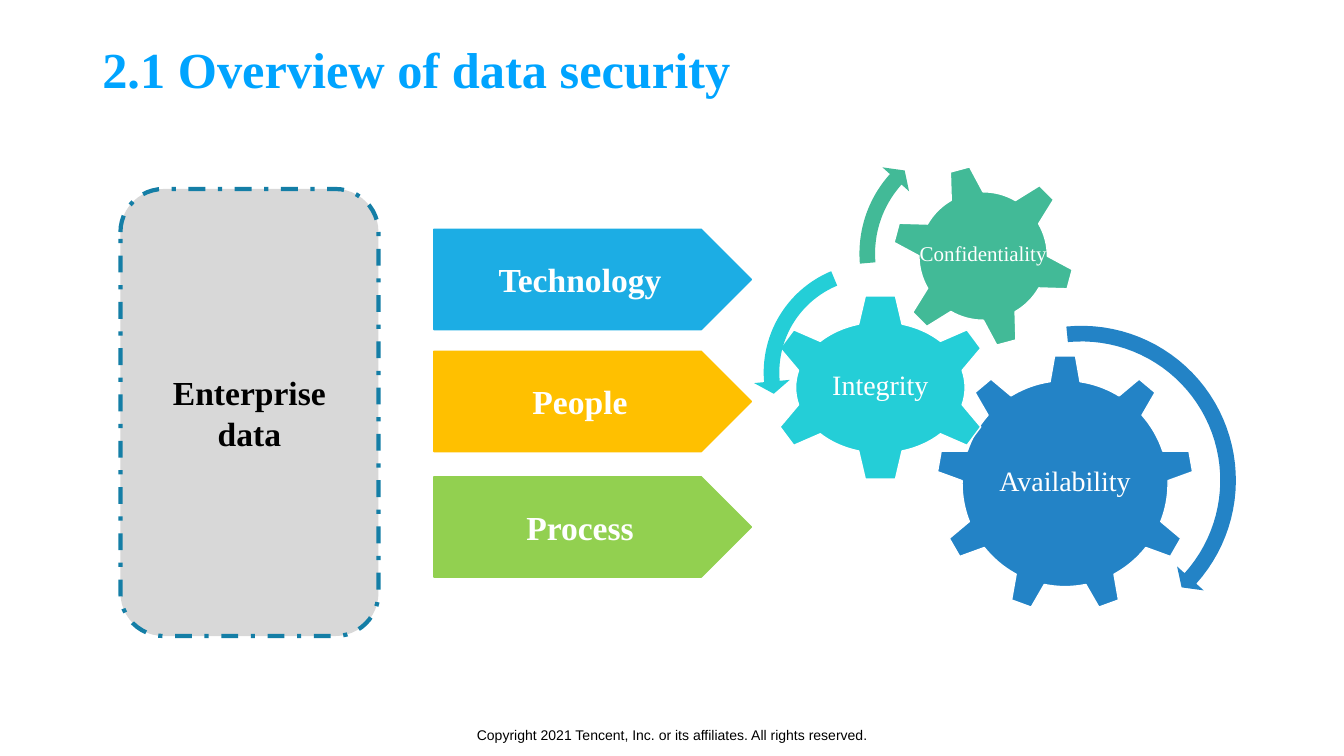
from math import cos, radians, sin

from pptx import Presentation
from pptx.dml.color import RGBColor
from pptx.enum.dml import MSO_LINE
from pptx.enum.shapes import MSO_SHAPE
from pptx.enum.text import MSO_ANCHOR, MSO_AUTO_SIZE, PP_ALIGN
from pptx.util import Inches, Pt

TITLE_BLUE = RGBColor(0x00, 0xA4, 0xFF)
WHITE = RGBColor(0xFF, 0xFF, 0xFF)
BLACK = RGBColor(0x00, 0x00, 0x00)
GRAY = RGBColor(0xD8, 0xD8, 0xD8)
BORDER_BLUE = RGBColor(0x14, 0x7E, 0xA6)
SKY = RGBColor(0x1C, 0xAD, 0xE4)
AMBER = RGBColor(0xFF, 0xC0, 0x00)
LIME = RGBColor(0x92, 0xD0, 0x50)
BLUE = RGBColor(0x23, 0x83, 0xC6)
CYAN = RGBColor(0x24, 0xCE, 0xD7)
GREEN = RGBColor(0x42, 0xBA, 0x97)
SERIF = "Times New Roman"


def write(shape, text, size, color, font=SERIF, bold=False,
          align=PP_ALIGN.CENTER, spacing=1.0, inset=(0.2, 0.1)):
    frame = shape.text_frame
    frame.word_wrap = True
    frame.auto_size = MSO_AUTO_SIZE.NONE
    frame.vertical_anchor = MSO_ANCHOR.MIDDLE
    frame.margin_left = frame.margin_right = Inches(inset[0])
    frame.margin_top = frame.margin_bottom = Inches(inset[1])
    frame.text = text
    paragraph = frame.paragraphs[0]
    paragraph.alignment = align
    paragraph.line_spacing = spacing
    paragraph.font.name = font
    paragraph.font.size = Pt(size)
    paragraph.font.bold = bold
    paragraph.font.color.rgb = color


def paint(shape, fill, line=None, width=2):
    shape.shadow.inherit = False
    shape.fill.solid()
    shape.fill.fore_color.rgb = fill
    if line is None:
        shape.line.fill.background()
    else:
        shape.line.color.rgb = line
        shape.line.width = Pt(width)


def add_preset(slide, kind, left, top, width, height):
    return slide.shapes.add_shape(
        kind, Inches(left), Inches(top), Inches(width), Inches(height))


def add_label(slide, left, top, width, height):
    return slide.shapes.add_textbox(
        Inches(left), Inches(top), Inches(width), Inches(height))


def add_title(slide, left, top, width, height):
    title = slide.shapes.title
    title.left, title.top = Inches(left), Inches(top)
    title.width, title.height = Inches(width), Inches(height)
    write(title, "2.1 Overview of data security", 72, TITLE_BLUE,
          bold=True, align=PP_ALIGN.LEFT, spacing=0.9)


def add_footer(slide, left, top, width, height):
    footer = add_label(slide, left, top, width, height)
    write(footer, "Copyright 2021 Tencent, Inc. or its affiliates. All rights reserved.",
          20, BLACK, font="Arial")


def add_data_panel(slide, left, top, width, height):
    panel = add_preset(slide, MSO_SHAPE.ROUNDED_RECTANGLE, left, top, width, height)
    panel.adjustments[0] = 0.167
    paint(panel, GRAY, BORDER_BLUE, 6)
    panel.line.dash_style = MSO_LINE.DASH_DOT
    write(panel, "Enterprise data", 48, BLACK, bold=True)


def add_pillars(slide, left, top, width, pillar_height):
    pillars = [("Technology", SKY, 0), ("People", AMBER, 2.42), ("Process", LIME, 4.91)]
    for text, color, offset in pillars:
        pillar = add_preset(slide, MSO_SHAPE.PENTAGON, left, top + offset,
                            width, pillar_height)
        paint(pillar, color, color)
        write(pillar, text, 48, WHITE, bold=True)


def add_gear(slide, kind, left, top, width, height, rotation, color, text, size, label_width):
    gear = add_preset(slide, kind, left, top, width, height)
    gear.rotation = rotation
    paint(gear, color, WHITE)
    label_height = height / 2
    label = add_label(slide, left + (width - label_width) / 2,
                      top + (height - label_height) / 2 - 0.03, label_width, label_height)
    write(label, text, size, WHITE, spacing=0.9, inset=(0.06, 0.06))


def add_arc_arrow(slide, center_x, center_y, radius, start, end, tip, color):
    half_band, half_head, steps = 0.155, 0.355, 40

    def point(distance, angle):
        return (Inches(center_x + distance * cos(radians(angle))),
                Inches(center_y + distance * sin(radians(angle))))

    angles = [start + (end - start) * step / steps for step in range(steps + 1)]
    outer = [point(radius + half_band, angle) for angle in angles]
    inner = [point(radius - half_band, angle) for angle in reversed(angles)]
    head = [point(radius + half_head, end), point(radius, tip),
            point(radius - half_head, end)]
    outline = outer + head + inner
    builder = slide.shapes.build_freeform(*outline[0])
    builder.add_line_segments(outline[1:], close=True)
    paint(builder.convert_to_shape(), color)


def add_gears(slide, left, top):
    gears = [
        (MSO_SHAPE.GEAR_9, 3.63, 3.78, 5.11, 5.11, 0, BLUE, "Availability", 40, 3.05),
        (MSO_SHAPE.GEAR_6, 0.28, 2.57, 4.48, 3.72, 0, CYAN, "Integrity", 40, 2.39),
        (MSO_SHAPE.GEAR_6, 2.74, 0, 3.64, 3.64, 345, GREEN, "Confidentiality", 30, 3.05),
    ]
    for kind, x, y, *details in gears:
        add_gear(slide, kind, left + x, top + y, *details)
    arrows = [
        (6.51, 6.27, 2.91, -95.6, 42, 46.9, BLUE),
        (2.38, 4.13, 2.02, 247.4, 174.9, 167.9, CYAN),
        (4.46, 1.77, 2.2, 175.1, 222, 228.5, GREEN),
    ]
    for x, y, *details in arrows:
        add_arc_arrow(slide, left + x, top + y, *details)


def main():
    presentation = Presentation()
    presentation.slide_width = Inches(26.67)
    presentation.slide_height = Inches(15)
    slide = presentation.slides.add_slide(presentation.slide_layouts[5])
    add_footer(slide, 8.14, 14.18, 10.4, 0.8)
    add_title(slide, 1.83, 0.9, 21.48, 1.05)
    add_gears(slide, 14.95, 3.26)
    add_pillars(slide, 8.61, 4.55, 6.3, 1.99)
    add_data_panel(slide, 2.39, 3.75, 5.12, 8.87)
    presentation.save("out.pptx")


if __name__ == "__main__":
    main()
